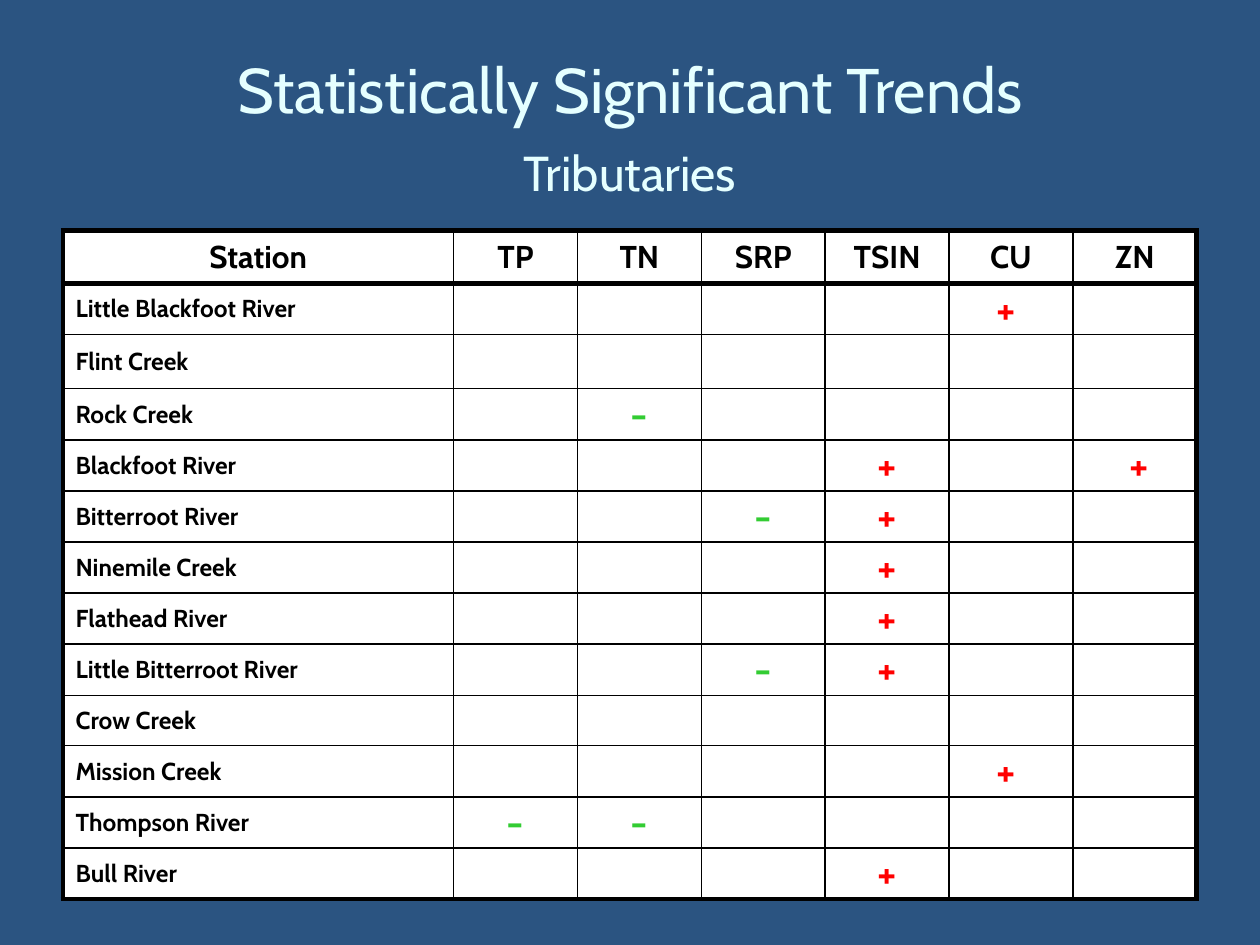
import lxml.etree
import pptx
import pptx.dml.color
import pptx.enum.text
import pptx.oxml.ns
import pptx.util

Inches, Pt = pptx.util.Inches, pptx.util.Pt
ALIGN, ANCHOR = pptx.enum.text.PP_ALIGN, pptx.enum.text.MSO_ANCHOR

HEADING, SUBHEADING = "Statistically Significant Trends", "Tributaries"
MEASURES = ["TP", "TN", "SRP", "TSIN", "CU", "ZN"]
STATIONS = [
    ("Little Blackfoot River", {"CU": "+ "}),
    ("Flint Creek", {}),
    ("Rock Creek", {"TN": "-"}),
    ("Blackfoot River", {"TSIN": "+", "ZN": " +"}),
    ("Bitterroot River", {"SRP": "-", "TSIN": "+"}),
    ("Ninemile Creek", {"TSIN": "+"}),
    ("Flathead River", {"TSIN": "+"}),
    ("Little Bitterroot River", {"SRP": "-", "TSIN": "+"}),
    ("Crow Creek", {}),
    ("Mission Creek", {"CU": "+ "}),
    ("Thompson River", {"TP": "-", "TN": "-"}),
    ("Bull River", {"TSIN": "+"}),
]
COLORS = {"background": "2B5481", "title": "E5FFFF", "ink": "000000",
          "cell": "FFFFFF", "rise": "FF0000", "fall": "33CC33"}
FONT = "Cabin"

WIDTH, HEIGHT = 10, 7.5
MARGIN = WIDTH / 20
CONTENT_WIDTH = WIDTH - 2 * MARGIN
TITLE_TOP, TITLE_HEIGHT, TABLE_TOP = 0.25, 1.5, 1.83
STATION_WIDTH = 3.1
MEASURE_WIDTH = (CONTENT_WIDTH - STATION_WIDTH) / len(MEASURES)
HEADER_HEIGHT, ROW_HEIGHT = 0.42, 0.4
TALL_ROWS = {"Flint Creek": 0.43}
THICK, THIN = 3, 1


def rgb(name):
    return pptx.dml.color.RGBColor.from_string(COLORS[name])


def write(paragraph, text, size, color="ink", bold=True, align=ALIGN.CENTER, before=0):
    paragraph.alignment = align
    if before:
        paragraph.space_before = Pt(before)
    run = paragraph.add_run()
    run.text = text
    font = run.font
    font.name, font.size, font.bold = FONT, Pt(size), bold
    font.color.rgb = rgb(color)


def draw_borders(cell, **widths):
    """Give the cell black borders; widths in points, keyed L, R, T, B."""
    properties = cell._tc.get_or_add_tcPr()
    qn = pptx.oxml.ns.qn
    for side, width in widths.items():
        line = lxml.etree.SubElement(properties, qn(f"a:ln{side}"), w=str(Pt(width)))
        fill = lxml.etree.SubElement(line, qn("a:solidFill"))
        lxml.etree.SubElement(fill, qn("a:srgbClr"), val=COLORS["ink"])


def add_title(slide):
    title = slide.shapes.title
    title.left, title.top = Inches(MARGIN), Inches(TITLE_TOP)
    title.width, title.height = Inches(CONTENT_WIDTH), Inches(TITLE_HEIGHT)
    frame = title.text_frame
    frame.vertical_anchor = ANCHOR.MIDDLE
    write(frame.paragraphs[0], HEADING, 36, color="title", bold=False)
    write(frame.add_paragraph(), SUBHEADING, 28, color="title", bold=False, before=9)


def add_trends(slide):
    heights = [HEADER_HEIGHT] + [TALL_ROWS.get(name, ROW_HEIGHT) for name, _ in STATIONS]
    widths = [STATION_WIDTH] + [MEASURE_WIDTH] * len(MEASURES)
    table = slide.shapes.add_table(
        len(heights), len(widths), Inches(MARGIN), Inches(TABLE_TOP),
        Inches(CONTENT_WIDTH), Inches(sum(heights))).table
    table.first_row = table.horz_banding = False
    for column, width in zip(table.columns, widths):
        column.width = Inches(width)
    for row, height in zip(table.rows, heights):
        row.height = Inches(height)

    rows = [["Station"] + MEASURES]
    rows += [[name] + [marks.get(m, "") for m in MEASURES] for name, marks in STATIONS]
    last_row, last_column = len(rows) - 1, len(widths) - 1
    for r, texts in enumerate(rows):
        for c, text in enumerate(texts):
            cell = table.cell(r, c)
            draw_borders(cell,
                         L=THICK if c == 0 else THIN,
                         R=THICK if c == last_column else THIN,
                         T=THICK if r <= 1 else THIN,
                         B=THICK if r in (0, last_row) else THIN)
            cell.fill.solid()
            cell.fill.fore_color.rgb = rgb("cell")
            cell.vertical_anchor = ANCHOR.MIDDLE
            paragraph = cell.text_frame.paragraphs[0]
            if r == 0:
                write(paragraph, text, 18)
            elif c == 0:
                write(paragraph, text, 14, align=ALIGN.LEFT)
            else:
                cell.margin_top = cell.margin_bottom = 0
                if text:
                    write(paragraph, text, 24, color="rise" if "+" in text else "fall")


def main():
    deck = pptx.Presentation()
    deck.slide_width, deck.slide_height = Inches(WIDTH), Inches(HEIGHT)
    slide = deck.slides.add_slide(deck.slide_layouts[5])
    slide.background.fill.solid()
    slide.background.fill.fore_color.rgb = rgb("background")
    add_title(slide)
    add_trends(slide)
    deck.save("out.pptx")


if __name__ == "__main__":
    main()
